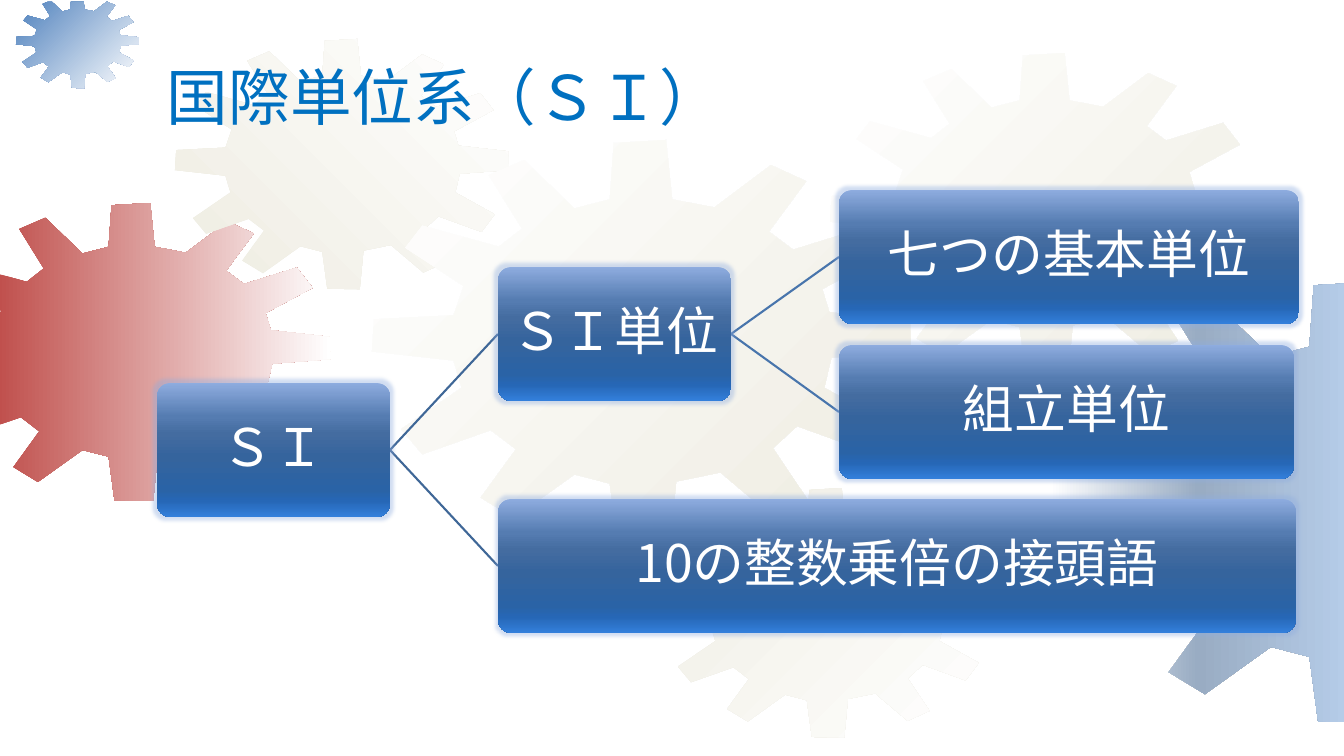
import pptx
import pptx.dml.color
import pptx.enum.shapes
import pptx.enum.text
import pptx.oxml
import pptx.oxml.ns
import pptx.util

EMU_PER_PX = 12192000 / 1344
WINDOW = (-2, 2, 1346, 760)  # left, top, right, bottom of the visible gears

GEAR_WIDTH = 535
GEAR = [
    (340, 67), (298, 59), (292, 0), (240, 3), (236, 59), (201, 68), (151, 20), (116, 35),
    (149, 88), (126, 106), (50, 85), (33, 107), (91, 145), (81, 174), (2, 178), (0, 210),
    (81, 219), (89, 246), (29, 287), (50, 312), (118, 288), (143, 307), (108, 355), (141, 375),
    (201, 332), (236, 341), (244, 400), (296, 401), (302, 339), (346, 330), (398, 374), (433, 358),
    (398, 306), (422, 284), (491, 309), (512, 281), (449, 246), (456, 216), (535, 210), (534, 180),
    (454, 171), (447, 148), (510, 114), (489, 87), (418, 109), (394, 91), (431, 41), (396, 25),
]

RED_FADE = [(0, "C0504D"), (100, "FFFFFF")]
BLUE_FADE = [(0, "4F81BD"), (100, "FFFFFF")]
BEIGE_FADE = [(0, "EEECE1"), (100, "FFFFFF")]
BEIGE_RISE = [(0, "FFFFFF"), (100, "EEECE1")]
STEEL_RISE = [(0, "FFFFFF"), (50, "99ACC3"), (100, "B5CCE8")]
BOX_FADE = [(0, "8EACDF"), (25, "557CB1"), (38, "446CA0"), (55, "35649D"),
            (80, "2A63A6"), (88, "2667B6"), (100, "337FDB")]

# left, top, width, gradient stops (None: translucent white), angle
GEARS = [
    (-67, 203, 398, RED_FADE, 0),
    (16, -4, 123, BLUE_FADE, 45),
    (175, 39, 334, BEIGE_FADE, 315),
    (372, 140, 539, BEIGE_RISE, 45),
    (0, 529, 503, None, 0),
    (660, 488, 333, BEIGE_FADE, 45),
    (830, 53, 430, BEIGE_RISE, 45),
    (1050, 282, 588, STEEL_RISE, 0),
]

BOX_HEIGHT = 134
# name: text, left, top, width
BOXES = {
    "si": ("ＳＩ", 157, 383, 233),
    "units": ("ＳＩ単位", 498, 267, 233),
    "base": ("七つの基本単位", 839, 190, 460),
    "derived": ("組立単位", 839, 345, 455),
    "prefixes": ("10の整数乗倍の接頭語", 498, 499, 798),
}
BRANCHES = [
    ("si", "units", "3F6797"),
    ("units", "base", "4875AC"),
    ("units", "derived", "4875AC"),
    ("si", "prefixes", "3F6797"),
]


def px(n):
    return pptx.util.Emu(round(n * EMU_PER_PX))


def rgb(hex_string):
    return pptx.dml.color.RGBColor.from_string(hex_string)


def element(xml):
    """Parse a DrawingML fragment whose root is written without its namespace."""
    tag, rest = xml.split(" ", 1)
    return pptx.oxml.parse_xml(f"{tag} {pptx.oxml.ns.nsdecls('a')} {rest}")


def clip(points, axis, limit, sign):
    """Cut a polygon, keeping the side where sign * (coordinate - limit) >= 0."""
    kept = []
    for a, b in zip(points, points[1:] + points[:1]):
        da, db = (sign * (p[axis] - limit) for p in (a, b))
        if da >= 0:
            kept.append(a)
        if da * db < 0:
            t = da / (da - db)
            kept.append(tuple(u + t * (v - u) for u, v in zip(a, b)))
    return kept


class Deck:
    latin = "Noto Sans CJK JP"
    east_asian = "Noto Sans CJK JP"

    def __init__(self):
        self.prs = pptx.Presentation()
        self.prs.slide_width, self.prs.slide_height = px(1344), px(756)
        self.slide = self.prs.slides.add_slide(self.prs.slide_layouts[6])
        self.shapes = self.slide.shapes

    def gradient(self, sp, stops, angle):
        """Fill a shape; the angle runs clockwise from left to right."""
        sp.fill.gradient()
        sp.fill.gradient_angle = -angle % 360
        stop_list = sp._element.spPr.find(".//" + pptx.oxml.ns.qn("a:gsLst"))
        for old in list(stop_list):
            stop_list.remove(old)
        for position, color in stops:
            stop_list.append(element(
                f'<a:gs pos="{position * 1000}"><a:srgbClr val="{color}"/></a:gs>'))

    def gear(self, left, top, width, stops, angle):
        k = width / GEAR_WIDTH
        points = [(left + x * k, top + y * k) for x, y in GEAR]
        for i, limit in enumerate(WINDOW):
            points = clip(points, i % 2, limit, 1 if i < 2 else -1)
        points = [(px(x), px(y)) for x, y in points]
        builder = self.shapes.build_freeform(*points[0], scale=1.0)
        builder.add_line_segments(points[1:], close=True)
        sp = builder.convert_to_shape()
        sp.shadow.inherit = False
        sp.line.fill.background()
        if stops:
            self.gradient(sp, stops, angle)
        else:
            sp.fill.solid()
            sp.fill.fore_color.rgb = rgb("FFFFFF")
            color = sp._element.spPr.find(".//" + pptx.oxml.ns.qn("a:srgbClr"))
            color.append(element('<a:alpha val="50000"/>'))

    def text(self, sp, text, size, color, font=None, align="LEFT", inset=10, spacing=1.0):
        tf = sp.text_frame
        tf.word_wrap = True
        tf.vertical_anchor = pptx.enum.text.MSO_ANCHOR.MIDDLE
        tf.margin_left = tf.margin_right = px(inset)
        tf.margin_top = tf.margin_bottom = px(inset / 2)
        p = tf.paragraphs[0]
        p.alignment = getattr(pptx.enum.text.PP_ALIGN, align)
        p.line_spacing = spacing
        r = p.add_run()
        r.text = text
        r.font.size = pptx.util.Pt(size)
        r.font.color.rgb = rgb(color)
        r.font.name = font or self.latin
        r.font._element.append(element(f'<a:ea typeface="{self.east_asian}"/>'))

    def title(self, text, left, top, width, height):
        sp = self.shapes.add_textbox(px(left), px(top), px(width), px(height))
        self.text(sp, text, 44, "0070C0", font="Arial")

    def box(self, text, left, top, width):
        sp = self.shapes.add_shape(pptx.enum.shapes.MSO_SHAPE.ROUNDED_RECTANGLE,
                                   px(left), px(top), px(width), px(BOX_HEIGHT))
        sp.adjustments[0] = 0.1
        sp.line.fill.background()
        self.gradient(sp, BOX_FADE, 90)
        sp.shadow.inherit = False
        effects = sp._element.spPr.find(pptx.oxml.ns.qn("a:effectLst"))
        effects.append(element('<a:glow rad="63500"><a:srgbClr val="8EACDF">'
                               '<a:alpha val="40000"/></a:srgbClr></a:glow>'))
        self.text(sp, text, 37, "FFFFFF", align="CENTER", inset=7, spacing=0.9)

    def branch(self, parent, child, color):
        """Join the right middle of one box to the left middle of another."""
        _, left, top, width = BOXES[parent]
        _, child_left, child_top, _ = BOXES[child]
        half = BOX_HEIGHT / 2
        line = self.shapes.add_connector(
            pptx.enum.shapes.MSO_CONNECTOR.STRAIGHT,
            px(left + width), px(top + half), px(child_left), px(child_top + half))
        line.line.color.rgb = rgb(color)
        line.line.width = pptx.util.Pt(1.5)
        line._element.spPr.append(element("<a:effectLst />"))


def main():
    deck = Deck()
    for gear in GEARS:
        deck.gear(*gear)
    deck.title("国際単位系（ＳＩ）", 157, 33, 1142, 126)
    for branch in BRANCHES:
        deck.branch(*branch)
    for box in BOXES.values():
        deck.box(*box)
    deck.prs.save("out.pptx")


if __name__ == "__main__":
    main()
